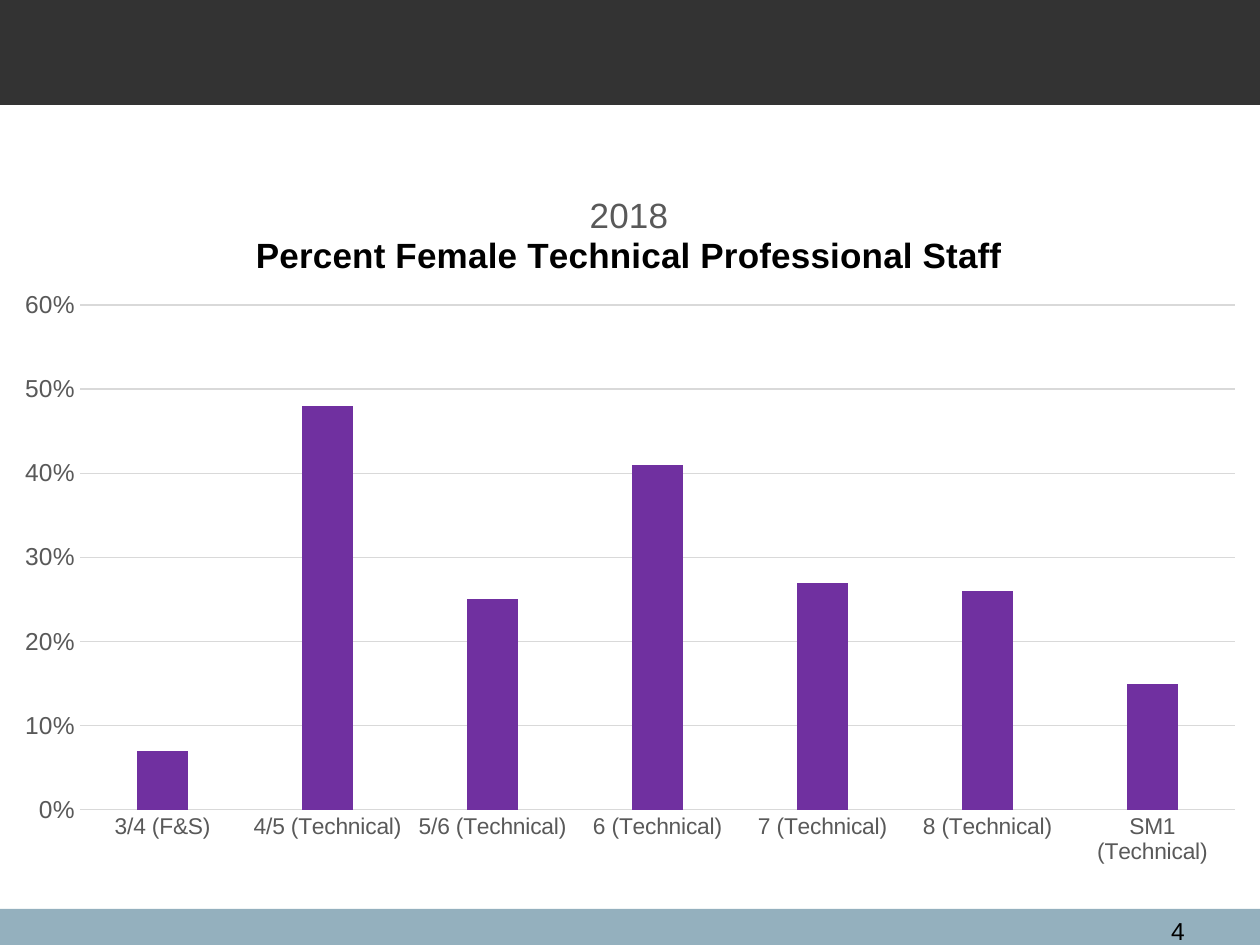
from lxml import etree
from pptx import Presentation
from pptx.chart.data import CategoryChartData
from pptx.dml.color import RGBColor
from pptx.enum.chart import XL_CHART_TYPE, XL_TICK_MARK
from pptx.enum.shapes import MSO_SHAPE
from pptx.enum.text import PP_ALIGN
from pptx.oxml.ns import qn
from pptx.util import Pt

COLUMNS = XL_CHART_TYPE.COLUMN_CLUSTERED
NO_TICKS = XL_TICK_MARK.NONE
RECTANGLE = MSO_SHAPE.RECTANGLE
RIGHT = PP_ALIGN.RIGHT

BLACK = RGBColor(0x00, 0x00, 0x00)
CHARCOAL = RGBColor(0x33, 0x33, 0x33)
GRAY = RGBColor(0x59, 0x59, 0x59)
GRID_GRAY = RGBColor(0xD9, 0xD9, 0xD9)
STEEL = RGBColor(0x94, 0xB0, 0xBE)
PURPLE = RGBColor(0x70, 0x30, 0xA0)

FONT = "Arial"
PAGE_WIDTH, PAGE_HEIGHT = 1260, 945
CHART_TOP, CHART_HEIGHT = 165, 714


def px(length):
    return round(length * 914400 / 126)


def place(parent, index, **settings):
    """Give a chart element a manual layout as its child number index."""
    for old in parent.findall(qn("c:layout")):
        parent.remove(old)
    layout = etree.Element(qn("c:layout"))
    parent.insert(index, layout)
    manual = etree.SubElement(layout, qn("c:manualLayout"))
    for name, value in settings.items():
        etree.SubElement(manual, qn("c:" + name)).set("val", str(value))


deck = Presentation()
deck.slide_width, deck.slide_height = px(PAGE_WIDTH), px(PAGE_HEIGHT)
page = deck.slides.add_slide(deck.slide_layouts[6])

# Footer and header bands
for top, height, color in [(909, 36, STEEL), (0, 105, CHARCOAL)]:
    band = page.shapes.add_shape(RECTANGLE, 0, px(top), px(PAGE_WIDTH), px(height))
    band.shadow.inherit = False
    band.fill.solid()
    band.fill.fore_color.rgb = color
    band.line.fill.background()

# Page number
number_box = page.shapes.add_textbox(px(1116), px(910), px(81), px(30))
number_box.text_frame.word_wrap = True
number_box.text_frame.text = "4"
para = number_box.text_frame.paragraphs[0]
para.alignment = RIGHT
span = para.runs[0]
span.font.name, span.font.size = FONT, Pt(14)
span.font.color.rgb = BLACK

# Column chart
data = CategoryChartData(number_format="0%")
data.categories = ["3/4 (F&S)", "4/5 (Technical)", "5/6 (Technical)", "6 (Technical)",
                   "7 (Technical)", "8 (Technical)", "SM1 (Technical)"]
data.add_series("Series 1", [0.07, 0.48, 0.25, 0.41, 0.27, 0.26, 0.15])
chart = page.shapes.add_chart(
    COLUMNS, 0, px(CHART_TOP), px(PAGE_WIDTH), px(CHART_HEIGHT), data).chart
chart.has_legend = False
chart.font.name, chart.font.size = FONT, Pt(10)
chart.font.color.rgb = BLACK

plot = chart.plots[0]
plot.gap_width, plot.overlap = 219, -27
plot.vary_by_categories = False
columns = plot.series[0]
columns.format.fill.solid()
columns.format.fill.fore_color.rgb = PURPLE

# Chart title
chart.has_title = True
title_frame = chart.chart_title.text_frame
title_frame.text = "2018\nPercent Female Technical Professional Staff"
for para, color, bold in zip(title_frame.paragraphs, (GRAY, BLACK), (False, True)):
    span = para.runs[0]
    span.font.name, span.font.size, span.font.bold = FONT, Pt(20), bold
    span.font.color.rgb = color

# Axes and gridlines
values, categories = chart.value_axis, chart.category_axis
for axis, size in [(categories, 13), (values, 14)]:
    axis.major_tick_mark = axis.minor_tick_mark = NO_TICKS
    axis.tick_labels.font.name = FONT
    axis.tick_labels.font.size = Pt(size)
    axis.tick_labels.font.color.rgb = GRAY
values.minimum_scale, values.maximum_scale, values.major_unit = 0, 0.6, 0.1
values.tick_labels.number_format = "0%"
values.tick_labels.number_format_is_linked = False
values.format.line.fill.background()
values.has_major_gridlines = True
for line in (categories.format.line, values.major_gridlines.format.line):
    line.color.rgb = GRID_GRAY
    line.width = Pt(0.75)

# Title and plot positions as shares of the chart
chart_root = chart.element.find(qn("c:chart"))
place(chart_root.find(qn("c:title")), 1, xMode="edge", yMode="edge",
      x=252 / PAGE_WIDTH, y=(191 - CHART_TOP) / CHART_HEIGHT)
place(chart_root.find(qn("c:plotArea")), 0,
      layoutTarget="inner", xMode="edge", yMode="edge",
      x=80 / PAGE_WIDTH, y=(305 - CHART_TOP) / CHART_HEIGHT,
      w=1155 / PAGE_WIDTH, h=505 / CHART_HEIGHT)

deck.save("out.pptx")
